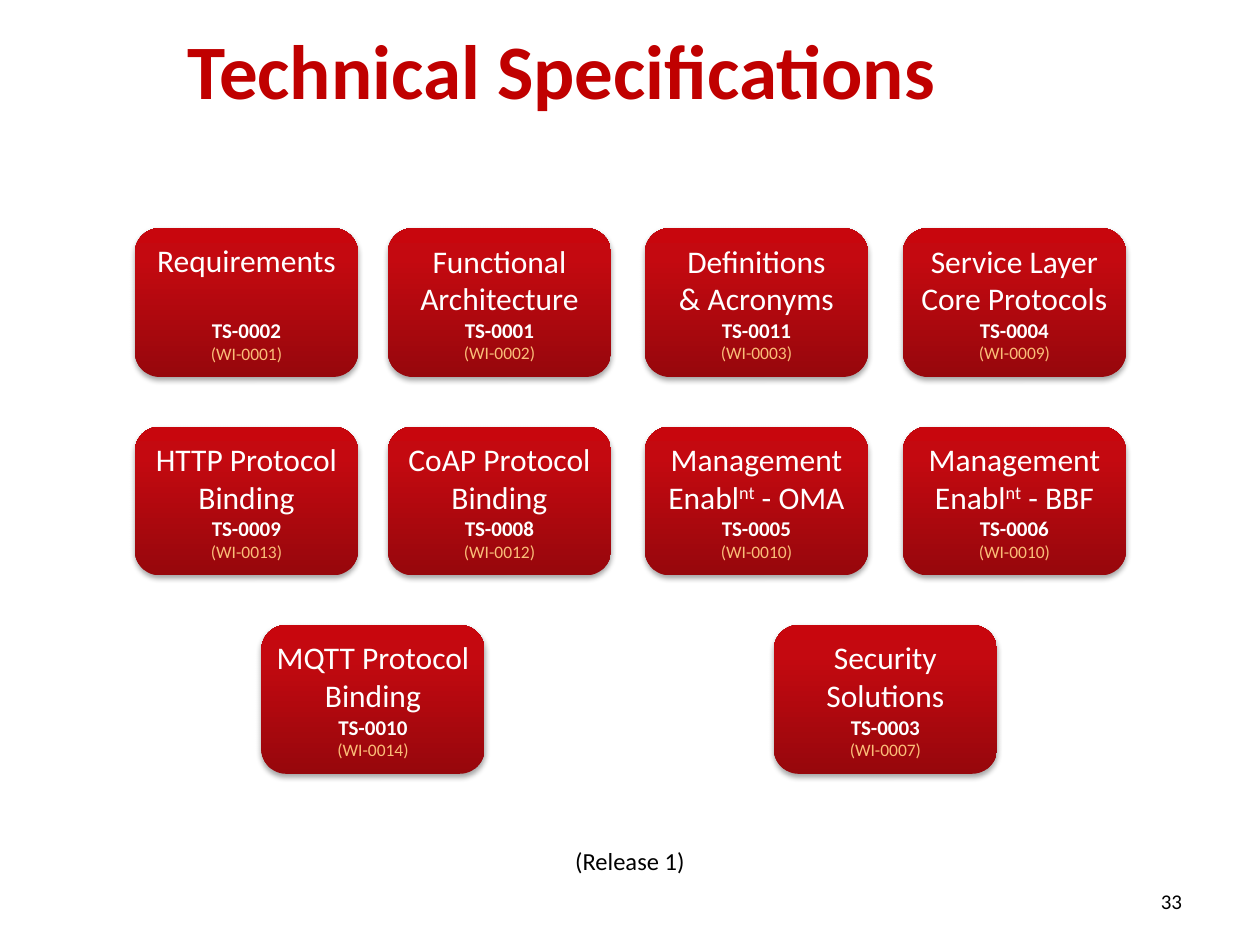
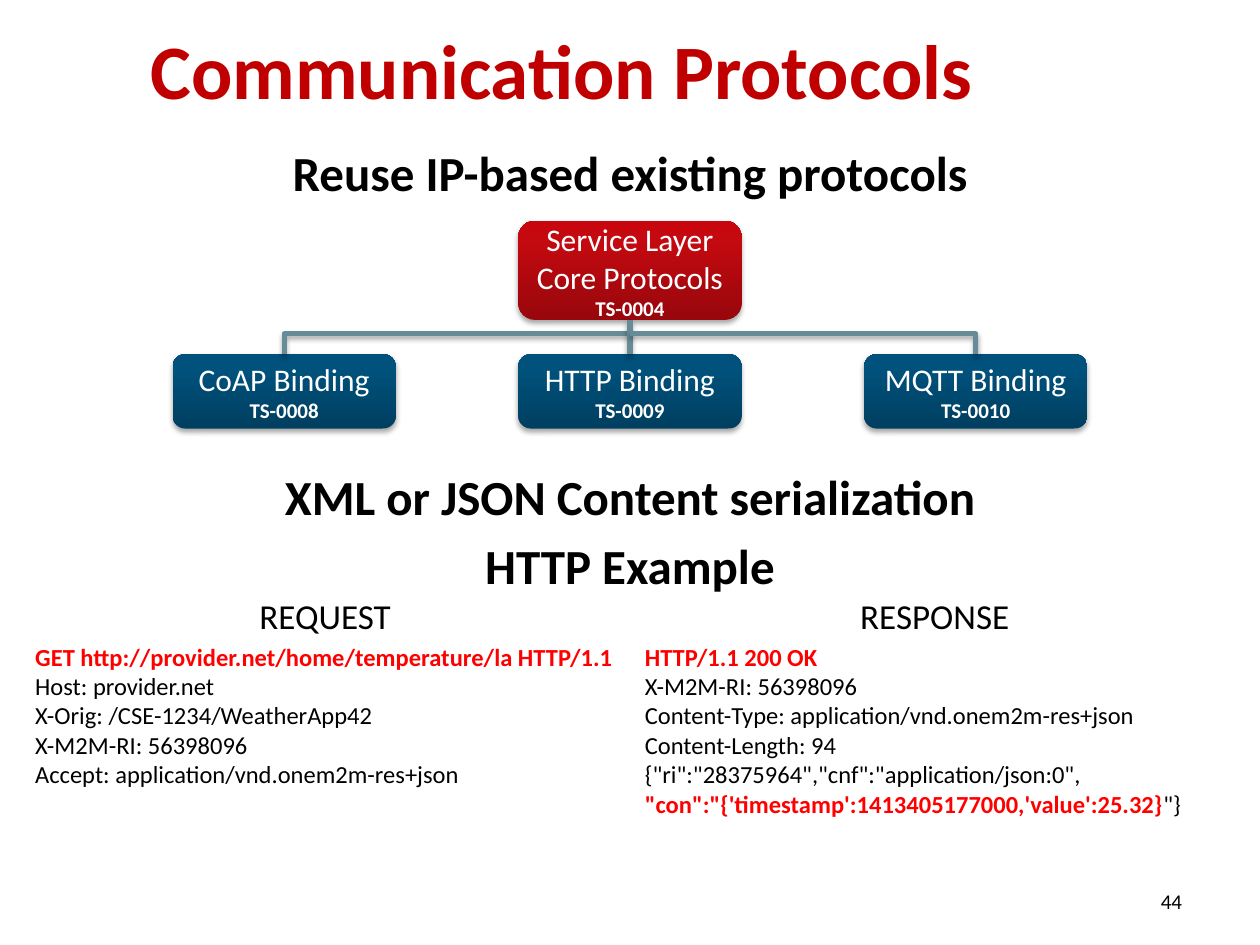
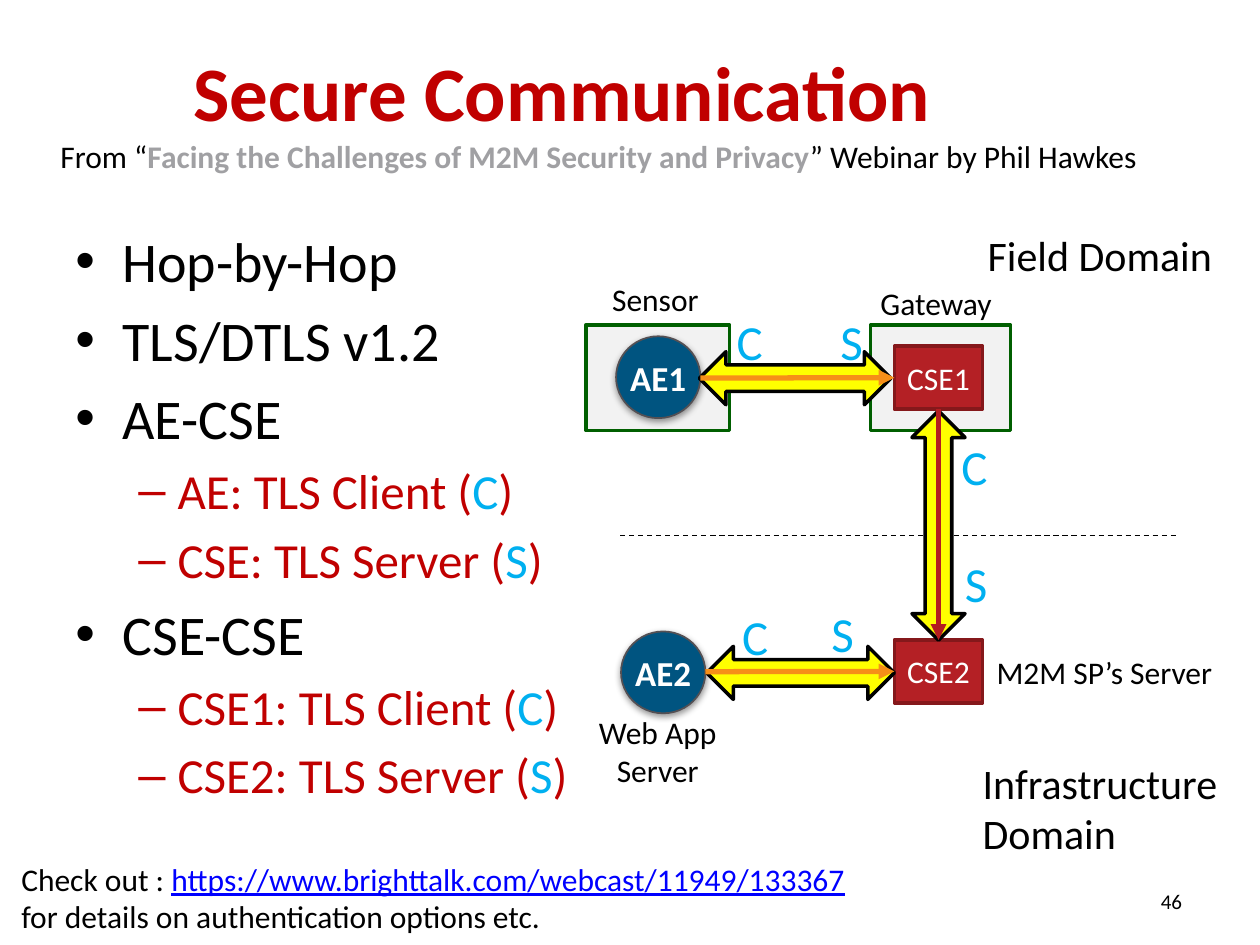
from copy import deepcopy
from dataclasses import dataclass

from lxml.etree import SubElement
from pptx import Presentation
from pptx.dml.color import RGBColor
from pptx.enum.dml import MSO_LINE
from pptx.enum.shapes import MSO_CONNECTOR, MSO_SHAPE
from pptx.enum.text import MSO_ANCHOR, MSO_AUTO_SIZE, PP_ALIGN
from pptx.oxml.ns import qn
from pptx.util import Cm, Pt


@dataclass(frozen=True)
class Theme:
    font: str = "Calibri"
    # Colours
    title: str = "C00000"
    text: str = "000000"
    white: str = "FFFFFF"
    work_item: str = "FABE78"
    highlight: str = "FF0000"
    role: str = "00B0F0"
    quote: str = "A0A0A3"
    link: str = "0000FF"
    tree_line: str = "668C97"
    host_fill: str = "F2F2F2"
    host_line: str = "005F00"
    cse_fill: str = "B42025"
    cse_line: str = "85181B"
    ae_fill: str = "005480"
    ae_line: str = "545054"
    tunnel: str = "FFFF00"
    ae_arrow: str = "F68F18"
    cse_arrow: str = "B41C21"
    red_gradient: tuple = ((0, "97070C"), (0.8, "C40910"), (1, "C8060D"))
    blue_gradient: tuple = ((0, "003F60"), (0.8, "00517C"), (1, "00527D"))
    # Type sizes
    title_size: int = 44
    bullet_size: int = 32
    heading_size: int = 28
    domain_size: int = 24
    caption_size: int = 20
    label_size: int = 18
    code_size: int = 14
    number_size: int = 12
    item_size: int = 10
    # Shadows: opacity in percent, blur and distance in points
    card_shadow: tuple = (35, 3.1, 1.8)
    circle_shadow: tuple = (42, 4, 1.6)


theme = Theme()


def add_block(slide, box, paragraphs=(), size=theme.label_size, color=theme.text, bold=False,
              align=PP_ALIGN.LEFT, inset=(0.25, 0.13), wrap=True,
              preset=None, fill=None, line=None, line_width=2):
    """Add a text box or preset shape; a run is a string or (string, font changes)."""
    box = [Cm(length) for length in box]
    if preset is None:
        shape = slide.shapes.add_textbox(*box)
    else:
        shape = slide.shapes.add_shape(preset, *box)
        shape.shadow.inherit = False
        if isinstance(fill, tuple):
            shape.fill.gradient()
            shape.fill.gradient_angle = 90
            stop_list = shape._element.spPr.find(qn("a:gradFill")).find(qn("a:gsLst"))
            stop_list.append(deepcopy(stop_list[0]))
            for stop, (position, stop_color) in zip(shape.fill.gradient_stops, fill):
                stop.position = position
                stop.color.rgb = RGBColor.from_string(stop_color)
        else:
            shape.fill.solid()
            shape.fill.fore_color.rgb = RGBColor.from_string(fill)
        if line:
            shape.line.color.rgb = RGBColor.from_string(line)
            shape.line.width = Pt(line_width)
        else:
            shape.line.fill.background()
    frame = shape.text_frame
    frame.word_wrap = wrap
    if not wrap:
        frame.auto_size = MSO_AUTO_SIZE.SHAPE_TO_FIT_TEXT
    frame.vertical_anchor = MSO_ANCHOR.MIDDLE if preset else MSO_ANCHOR.TOP
    frame.margin_left = frame.margin_right = Cm(inset[0])
    frame.margin_top = frame.margin_bottom = Cm(inset[1])
    for index, runs in enumerate(paragraphs):
        paragraph = frame.add_paragraph() if index else frame.paragraphs[0]
        paragraph.alignment = align
        for item in [runs] if isinstance(runs, (str, tuple)) else runs:
            text, changes = (item, {}) if isinstance(item, str) else item
            run = paragraph.add_run()
            run.text = text
            run.font.name = theme.font
            run.font.size = Pt(changes.get("size", size))
            run.font.bold = changes.get("bold", bold)
            run.font.color.rgb = RGBColor.from_string(changes.get("color", color))
            if "underline" in changes:
                run.font.underline = True
            if "baseline" in changes:
                run._r.get_or_add_rPr().set("baseline", changes["baseline"])
    return shape


def set_shadow(item, shadow=None):
    """Replace the effects of a shape or connector by one shadow, or by none."""
    properties = item._element.spPr
    for effects in properties.findall(qn("a:effectLst")):
        properties.remove(effects)
    effects = SubElement(properties, qn("a:effectLst"))
    if shadow:
        opacity, blur, distance = shadow
        outer = SubElement(effects, qn("a:outerShdw"), blurRad=str(int(Pt(blur))),
                           dist=str(int(Pt(distance))), dir="5400000", rotWithShape="0")
        shade = SubElement(outer, qn("a:srgbClr"), val="000000")
        SubElement(shade, qn("a:alpha"), val=str(opacity * 1000))


presentation = Presentation()
presentation.slide_width = Cm(25.4)
presentation.slide_height = Cm(19.05)

# Titles and page numbers
slides = []
for title, title_top, number in (
    ("Technical Specifications", 0.33, "33"),
    ("Communication Protocols", 0.33, "44"),
    ("Secure Communication", 0.76, "46"),
):
    slide = presentation.slides.add_slide(presentation.slide_layouts[6])
    add_block(slide, (1.27, title_top, 20.12, 2.2), [title], theme.title_size, theme.title,
              bold=True, align=PP_ALIGN.CENTER)
    add_block(slide, (23.06, 17.78, 1.02, 0.76), [number], theme.number_size,
              align=PP_ALIGN.RIGHT, wrap=False)
    slides.append(slide)
specification_slide, protocol_slide, security_slide = slides

number_style = {"size": theme.number_size, "bold": True}
item_style = {"size": theme.item_size, "color": theme.work_item}
card_style = {"preset": MSO_SHAPE.ROUNDED_RECTANGLE, "color": theme.white,
              "align": PP_ALIGN.CENTER, "inset": (0, 0.13)}
card_width = 4.5

# Slide 1: grid of specification cards
columns = (2.72, 7.82, 13, 18.2)
middle_columns = ((columns[0] + columns[1]) / 2, (columns[2] + columns[3]) / 2)
raised = ("nt", {"baseline": "30000"})
rows = (
    (columns, (
        (["Requirements"], "TS-0002", "(WI-0001)"),
        (["Functional", "Architecture"], "TS-0001", "(WI-0002)"),
        (["Definitions", "& Acronyms"], "TS-0011", "(WI-0003)"),
        (["Service Layer", "Core Protocols"], "TS-0004", "(WI-0009)"),
    )),
    (columns, (
        (["HTTP Protocol", "Binding"], "TS-0009", "(WI-0013)"),
        (["CoAP Protocol", "Binding"], "TS-0008", "(WI-0012)"),
        (["Management", ["Enabl", raised, " - OMA"]], "TS-0005", "(WI-0010)"),
        (["Management", ["Enabl", raised, " - BBF"]], "TS-0006", "(WI-0010)"),
    )),
    (middle_columns, (
        (["MQTT Protocol", "Binding"], "TS-0010", "(WI-0014)"),
        (["Security", "Solutions"], "TS-0003", "(WI-0007)"),
    )),
)
for row, (lefts, cards) in enumerate(rows):
    for left, (name, number, work_item) in zip(lefts, cards):
        card = add_block(specification_slide, (left, 4.6 + 4 * row, card_width, 3),
                         [*name, (number, number_style), (work_item, item_style)],
                         fill=theme.red_gradient, **card_style)
        set_shadow(card, theme.card_shadow)
        if len(name) == 1:
            card.text_frame.paragraphs[0].space_after = Pt(22)

add_block(specification_slide, (7.95, 16.92, 9.5, 0.86), ["(Release 1)"], theme.code_size,
          align=PP_ALIGN.CENTER)

# Slide 2: headings
for top, height, headings in (
    (2.74, 1.88, ["Reuse IP-based existing protocols"]),
    (9.27, 3, ["XML or JSON Content serialization", "HTTP Example"]),
):
    block = add_block(protocol_slide, (1.27, top, 22.86, height), headings, theme.heading_size,
                      bold=True, align=PP_ALIGN.CENTER)
    for paragraph in block.text_frame.paragraphs[1:]:
        paragraph.space_before = Pt(6)

# Slide 2: protocol tree
core = add_block(protocol_slide, (10.45, 4.45, card_width, 2),
                 ["Service Layer", "Core Protocols", ("TS-0004", number_style)],
                 fill=theme.red_gradient, **card_style)
set_shadow(core, theme.card_shadow)
core_center = core.left + core.width // 2
binding_top = 7.14
for index, (name, number) in enumerate((
    ("CoAP Binding", "TS-0008"), ("HTTP Binding", "TS-0009"), ("MQTT Binding", "TS-0010"),
)):
    binding = add_block(protocol_slide, (3.48 + 6.97 * index, binding_top, card_width, 1.5),
                        [name, (number, number_style)], fill=theme.blue_gradient, **card_style)
    set_shadow(binding, theme.card_shadow)
    if index == 1:
        branch = protocol_slide.shapes.add_connector(MSO_CONNECTOR.STRAIGHT, 0, 0, 0, 0)
        branch.begin_connect(core, 2)
        branch.end_connect(binding, 0)
    else:
        branch = protocol_slide.shapes.add_connector(
            MSO_CONNECTOR.ELBOW, core_center, Cm(6.73),
            binding.left + binding.width // 2, Cm(binding_top))
        branch._element.spPr.find(qn("a:prstGeom")).set("prst", "bentConnector2")
    branch.line.color.rgb = RGBColor.from_string(theme.tree_line)
    branch.line.width = Pt(3)
    set_shadow(branch, theme.card_shadow)

# Slide 2: request and response
code_highlight = {"color": theme.highlight, "bold": True}
for left, caption, code in (
    (0.46, "REQUEST", [
        ("GET http://provider.net/home/temperature/la HTTP/1.1", code_highlight),
        "Host: provider.net",
        "X-Orig: /CSE-1234/WeatherApp42",
        "X-M2M-RI: 56398096",
        "Accept: application/vnd.onem2m-res+json",
    ]),
    (12.75, "RESPONSE", [
        ("HTTP/1.1 200 OK", code_highlight),
        "X-M2M-RI: 56398096",
        "Content-Type: application/vnd.onem2m-res+json",
        "Content-Length: 94",
        '{"ri":"28375964","cnf":"application/json:0",',
        [("\"con\":\"{'timestamp':1413405177000,'value':25.32}", code_highlight), '"}'],
    ]),
):
    message = add_block(protocol_slide, (left, 11.86, 12.19, 5.92),
                        [(caption, {"size": theme.caption_size}), *code], theme.code_size)
    message.text_frame.paragraphs[0].alignment = PP_ALIGN.CENTER
    message.text_frame.paragraphs[1].space_before = Pt(2.8)

# Slide 3: source and link
add_block(security_slide, (0.97, 2.64, 22.28, 1.02), [[
    "From “",
    ("Facing the Challenges of M2M Security and Privacy", {"color": theme.quote, "bold": True}),
    "” Webinar by Phil Hawkes",
]], wrap=False)
add_block(security_slide, (0.18, 17.2, 17.32, 1.8), [
    ["Check out : ", ("https://www.brighttalk.com/webcast/11949/133367",
                      {"color": theme.link, "underline": True})],
    "for details on authentication options etc.",
], wrap=False)

# Slide 3: bullets, as text and the role letter of second-level lines
bullets = (
    ("Hop-by-Hop", None), ("TLS/DTLS v1.2", None),
    ("AE-CSE", None), ("AE: TLS Client (", "C"), ("CSE: TLS Server (", "S"),
    ("CSE-CSE", None), ("CSE1: TLS Client (", "C"), ("CSE2: TLS Server (", "S"),
)
sub_style = {"size": theme.heading_size, "color": theme.title}
role_style = {"size": theme.heading_size, "color": theme.role}
bullet_block = add_block(
    security_slide, (1.27, 4.44, 10.52, 12.57),
    [[(text, sub_style), (role, role_style), (")", sub_style)] if role else text
     for text, role in bullets], theme.bullet_size)
for index, (paragraph, (text, role)) in enumerate(zip(bullet_block.text_frame.paragraphs, bullets)):
    margin, hanging, mark, gap = (2.06, 0.79, "–", 5.6) if role else (0.95, 0.95, "•", 6.4)
    if index:
        paragraph.space_before = Pt(gap)
    properties = paragraph._p.get_or_add_pPr()
    properties.set("marL", str(int(Cm(margin))))
    properties.set("indent", str(-int(Cm(hanging))))
    SubElement(properties, qn("a:buFont"), typeface="Arial")
    SubElement(properties, qn("a:buChar"), char=mark)

# Slide 3: hosts and entities
for left, width in ((11.81, 2.9), (17.55, 2.82)):
    add_block(security_slide, (left, 6.55, width, 2.13), preset=MSO_SHAPE.RECTANGLE,
              fill=theme.host_fill, line=theme.host_line)
cse1, cse2 = [
    add_block(security_slide, (18.03, top, 1.78, 1.27), [name], color=theme.white,
              align=PP_ALIGN.CENTER, inset=(0, 0), preset=MSO_SHAPE.RECTANGLE,
              fill=theme.cse_fill, line=theme.cse_line)
    for name, top in (("CSE1", 6.98), ("CSE2", 12.9))
]
for name, left, top in (("AE1", 12.42, 6.78), ("AE2", 12.52, 12.73)):
    circle = add_block(security_slide, (left, top, 1.7, 1.65), [name], theme.caption_size,
                       theme.white, bold=True, align=PP_ALIGN.CENTER, inset=(0, 0.13),
                       preset=MSO_SHAPE.OVAL, fill=theme.ae_fill, line=theme.ae_line, line_width=1)
    set_shadow(circle, theme.circle_shadow)

# Slide 3: border between the domains
border = security_slide.shapes.add_connector(MSO_CONNECTOR.STRAIGHT, Cm(12.5), Cm(10.8),
                                             Cm(23.7), Cm(10.8))
border.line.color.rgb = RGBColor.from_string(theme.text)
border.line.width = Pt(0.75)
border.line.dash_style = MSO_LINE.DASH
set_shadow(border)

# Slide 3: domain names and labels
for box, lines in (
    ((19.81, 15.27, 4.78, 2.06), ["Infrastructure", "Domain"]),
    ((19.91, 4.62, 4.57, 1.02), ["Field Domain"]),
):
    add_block(security_slide, box, lines, theme.domain_size, inset=(0, 0), wrap=False)
for box, lines, align in (
    ((12.09, 5.51, 2.36, 1.02), ["Sensor"], PP_ALIGN.LEFT),
    ((17.5, 5.59, 2.87, 1.02), ["Gateway"], PP_ALIGN.LEFT),
    ((19.84, 13.03, 5.16, 1.02), ["M2M SP’s Server"], PP_ALIGN.LEFT),
    ((11.81, 14.25, 2.9, 1.8), ["Web App", "Server"], PP_ALIGN.CENTER),
):
    add_block(security_slide, box, lines, align=align)

# Slide 3: secure tunnels with the client-to-server arrows inside
for box, rotation, start, source, target, site, color in (
    ((14.1, 7.09, 3.86, 1.07), 0, (14.12, 7.62), None, cse1, 1, theme.ae_arrow),
    ((16.61, 10.06, 4.62, 1.07), 270, (18.92, 8.25), cse1, cse2, 0, theme.cse_arrow),
    ((14.25, 13.03, 3.78, 1.07), 0, (14.22, 13.54), None, cse2, 1, theme.ae_arrow),
):
    tunnel = add_block(security_slide, box, preset=MSO_SHAPE.LEFT_RIGHT_ARROW,
                       fill=theme.tunnel, line=theme.text)
    tunnel.rotation = rotation
    x, y = Cm(start[0]), Cm(start[1])
    arrow = security_slide.shapes.add_connector(MSO_CONNECTOR.STRAIGHT, x, y, x, y)
    if source:
        arrow.begin_connect(source, 2)
    arrow.end_connect(target, site)
    arrow.line.color.rgb = RGBColor.from_string(color)
    arrow.line.width = Pt(3)
    SubElement(arrow.line._get_or_add_ln(), qn("a:tailEnd"), type="triangle")
    set_shadow(arrow)

# Slide 3: client and server roles
for role, left, top in (
    ("C", 14.6, 6.15), ("S", 16.69, 6.15), ("C", 19.13, 8.66),
    ("S", 19.2, 11.02), ("C", 14.71, 12.09), ("S", 16.51, 12.04),
):
    add_block(security_slide, (left, top, 1, 1.45), [role], theme.heading_size, theme.role,
              wrap=False)

presentation.save("out.pptx")
